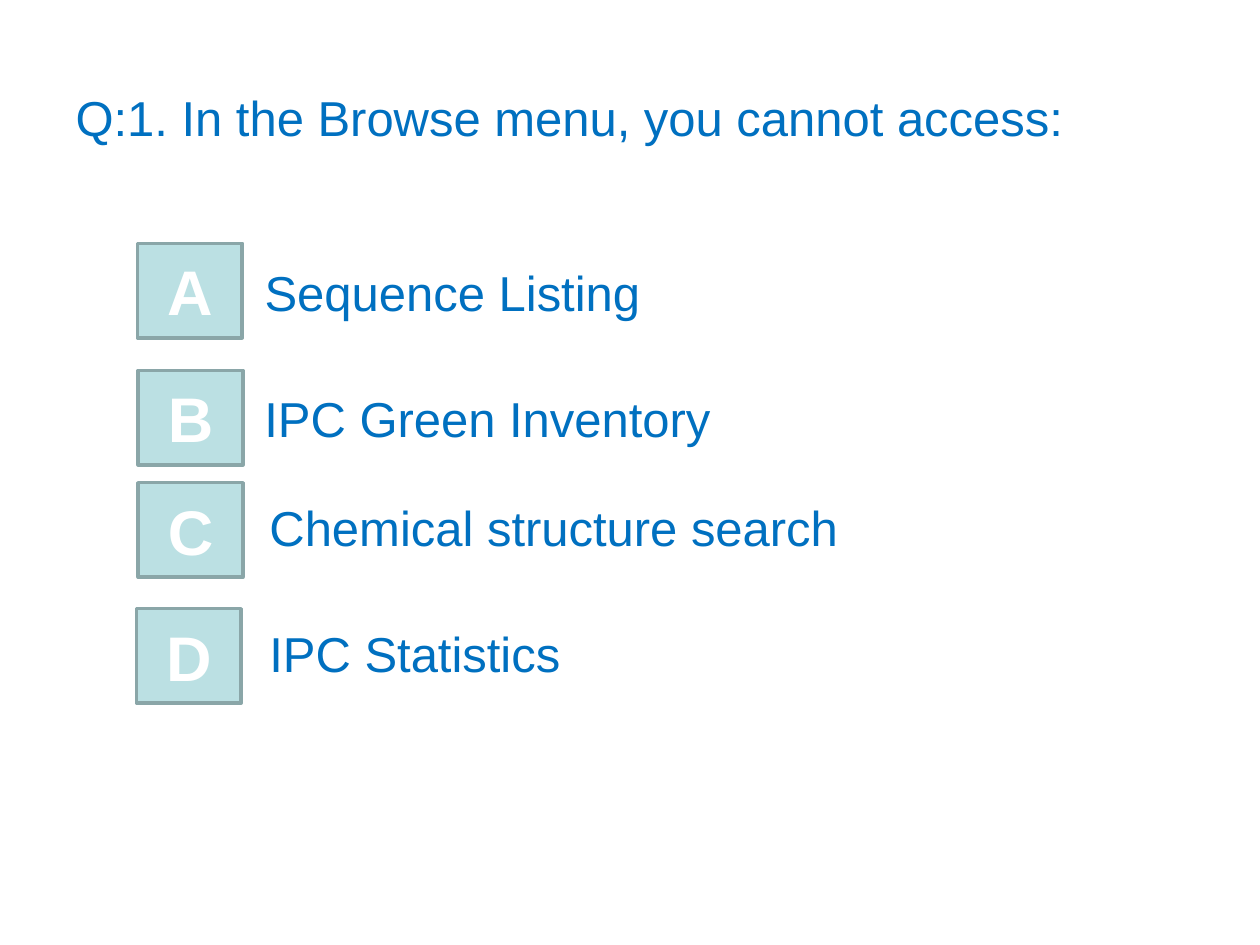
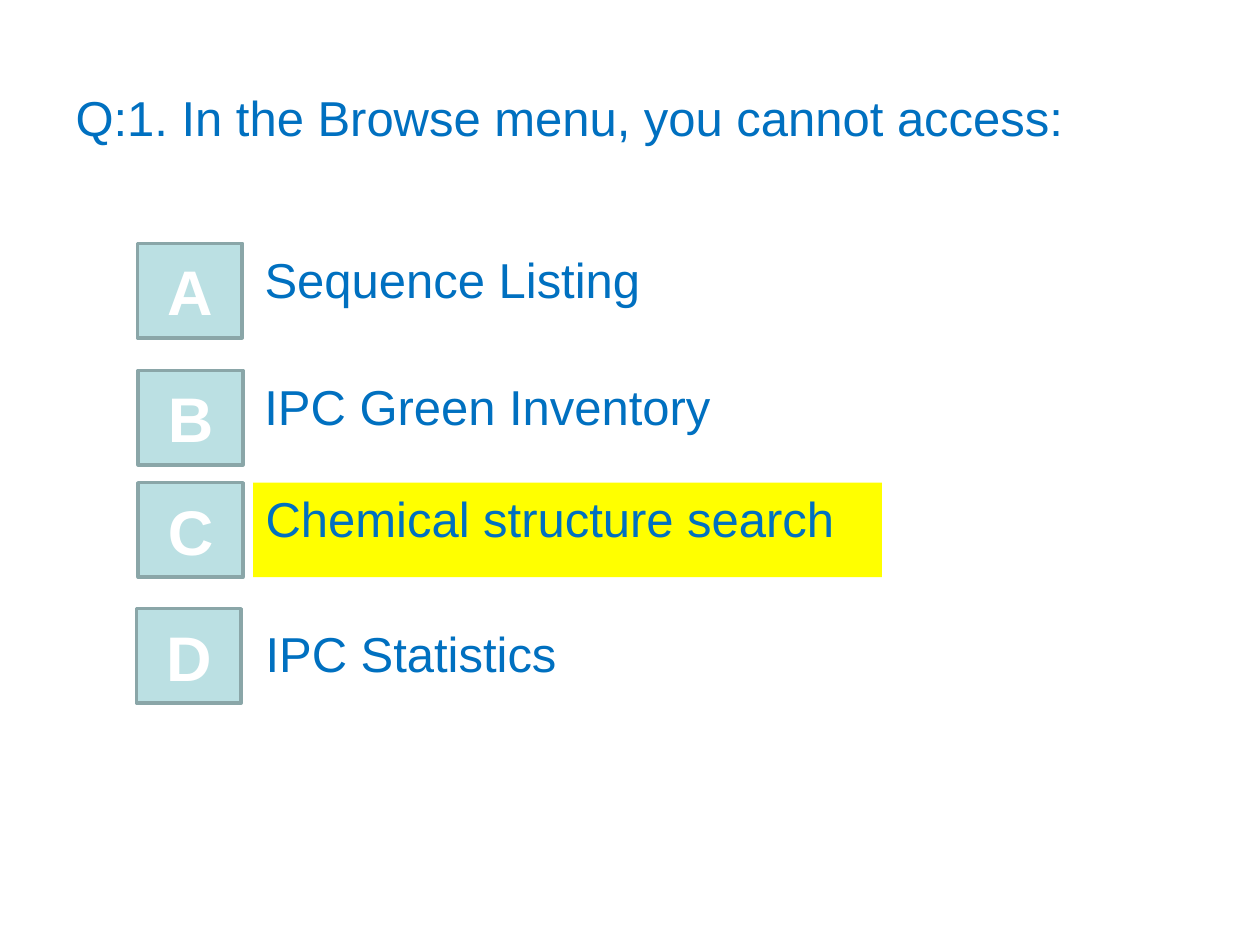
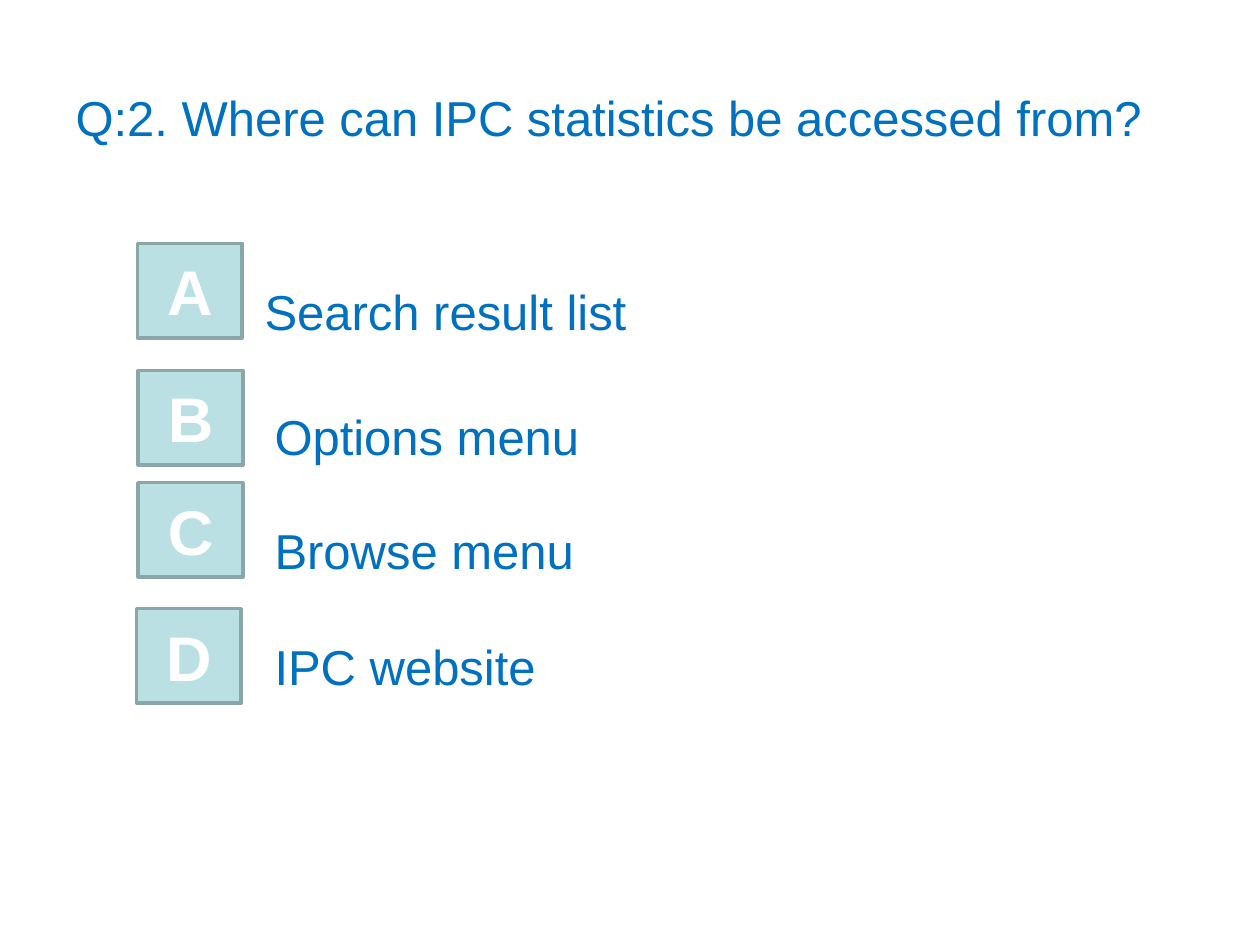
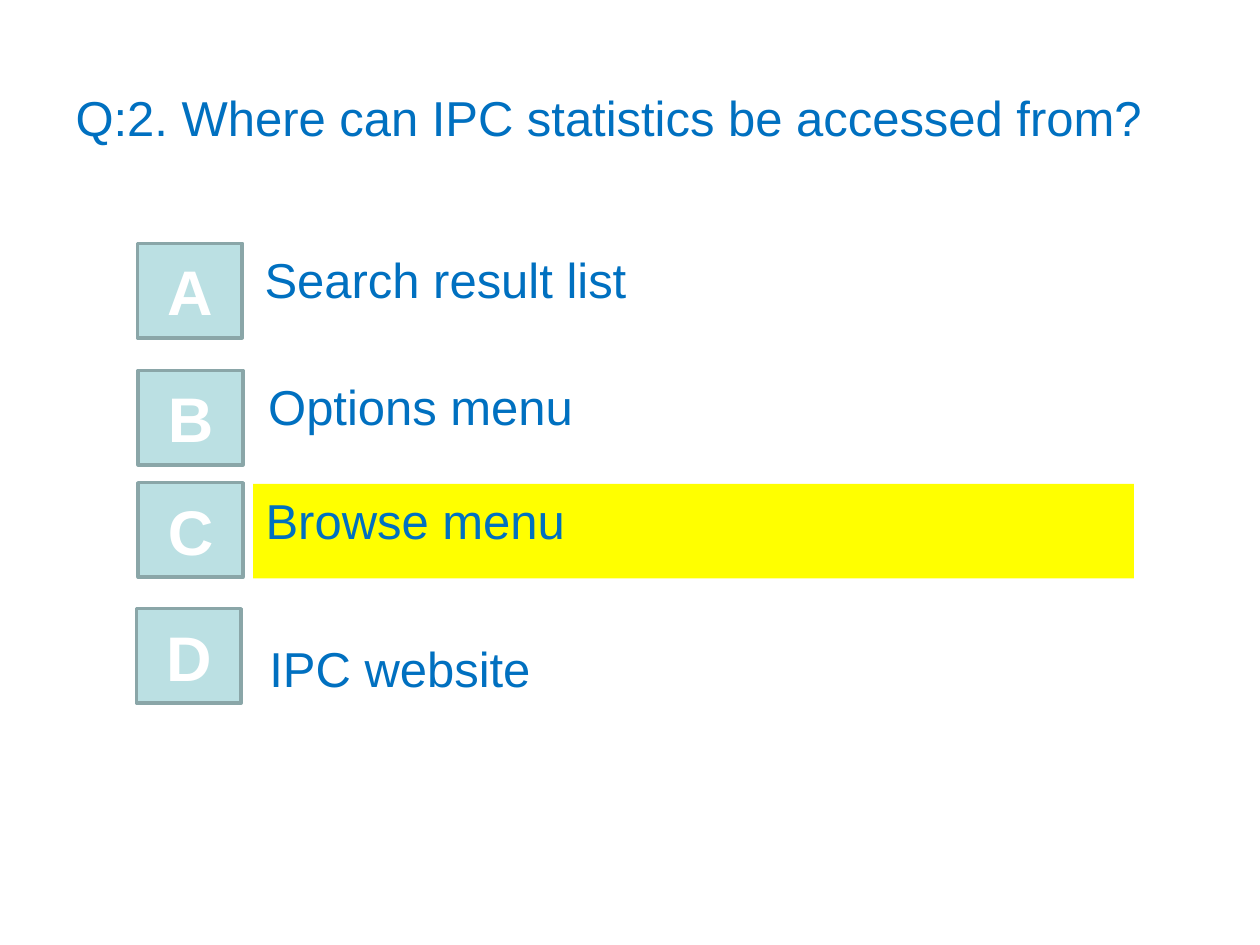
from dataclasses import dataclass

from lxml.etree import SubElement
from pptx import Presentation
from pptx.dml.color import RGBColor
from pptx.enum.shapes import MSO_SHAPE
from pptx.enum.text import MSO_ANCHOR, MSO_AUTO_SIZE, PP_ALIGN
from pptx.oxml.ns import qn
from pptx.util import Pt


@dataclass(frozen=True)
class Theme:
    """Colours, font and type sizes shared by all quiz slides."""
    font: str = "Arial"
    text: str = "0070C0"
    button: str = "BBE0E3"
    edge: str = "8AA6A8"
    white: str = "FFFFFF"
    correct: str = "FFFF00"
    text_size: int = 28
    letter_size: int = 36


THEME = Theme()
TITLE_BOX = (36, 21.6, 648, 90)
BUTTON_SIZE = (59.8, 54)
BUTTONS = {"A": (78.6, 139), "B": (79, 211.7), "C": (79, 275.8), "D": (78, 347.8)}

Q1 = "Q:1. In the Browse menu, you cannot access:"
Q2 = "Q:2. Where can IPC statistics be accessed from?"

SLIDES = [
    (Q1, [
        ("Sequence Listing", (144, 146.2, 240, 39.6), None),
        ("IPC Green Inventory", (144, 218.2, 342, 41), None),
        ("Chemical structure search", (146.9, 280.8, 387.4, 44.6), None),
        ("IPC Statistics", (146.9, 352.8, 216, 44.6), None),
    ]),
    (Q1, [
        ("Sequence Listing", (144, 139, 306, 54), THEME.white),
        ("IPC Green Inventory", (144, 211.7, 306, 54), THEME.white),
        ("Chemical structure search", (144.7, 275.8, 359.3, 54), THEME.correct),
        ("IPC Statistics", (144.7, 352.8, 252, 54), THEME.white),
    ]),
    (Q2, [
        ("Search result list", (144, 157, 432, 39.6), None),
        ("Options menu", (149.8, 229, 414.7, 41), None),
        ("Browse menu", (149.8, 293.8, 426.2, 41), None),
        ("IPC website", (149.8, 360, 426.2, 41), None),
    ]),
    (Q2, [
        ("Search result list", (144, 139, 468, 57.6), None),
        ("Options menu", (146.2, 211.7, 491.8, 54), None),
        ("Browse menu", (144.7, 276.5, 503.3, 54), THEME.correct),
        ("IPC website", (146.9, 361.4, 513.4, 41), None),
    ]),
]


def place(sp, box):
    """Move and size a placeholder to a box given in points."""
    sp.left, sp.top, sp.width, sp.height = (Pt(v) for v in box)


def fill(sp, color):
    """Give a shape a solid fill."""
    sp.fill.solid()
    sp.fill.fore_color.rgb = RGBColor.from_string(color)


def write(sp, text, size=THEME.text_size, color=THEME.text, bold=False,
          align=PP_ALIGN.LEFT, anchor=MSO_ANCHOR.TOP):
    """Write one formatted line into a shape."""
    tf = sp.text_frame
    tf.word_wrap = True
    tf.auto_size = MSO_AUTO_SIZE.NONE
    tf.vertical_anchor = anchor
    p = tf.paragraphs[0]
    p.alignment = align
    p.space_before = Pt(0)
    r = p.add_run()
    r.text = text
    r.font.name = THEME.font
    r.font.size = Pt(size)
    r.font.bold = bold
    r.font.color.rgb = RGBColor.from_string(color)
    return p


def clear_bullet(p):
    """Remove the bullet and hanging indent of a paragraph."""
    pPr = p._p.get_or_add_pPr()
    pPr.set("marL", "0")
    pPr.set("indent", "0")
    SubElement(pPr, qn("a:buNone"))


def add_question(s, text):
    """Put the question into the title placeholder."""
    place(s.shapes.title, TITLE_BOX)
    write(s.shapes.title, text, anchor=MSO_ANCHOR.MIDDLE)


def add_answer(s, text, box, color, body=None):
    """Write an answer into the body placeholder or a new text box."""
    if body is None:
        sp = s.shapes.add_textbox(*(Pt(v) for v in box))
        write(sp, text)
    else:
        sp = body
        place(sp, box)
        clear_bullet(write(sp, text))
    if color:
        fill(sp, color)


def add_button(s, letter, corner):
    """Draw the lettered button of an answer."""
    sp = s.shapes.add_shape(MSO_SHAPE.ACTION_BUTTON_CUSTOM,
                            *(Pt(v) for v in corner + BUTTON_SIZE))
    sp.shadow.inherit = False
    fill(sp, THEME.button)
    sp.line.color.rgb = RGBColor.from_string(THEME.edge)
    sp.line.width = Pt(2)
    write(sp, letter, THEME.letter_size, THEME.white, True,
          PP_ALIGN.CENTER, MSO_ANCHOR.MIDDLE)


def add_quiz_slide(prs, question, answers):
    """Add a slide with a question and its lettered answers."""
    s = prs.slides.add_slide(prs.slide_layouts[1])
    add_question(s, question)
    for i, (text, box, color) in enumerate(answers):
        add_answer(s, text, box, color, s.placeholders[1] if i == 0 else None)
    for letter, corner in BUTTONS.items():
        add_button(s, letter, corner)


def main():
    """Build and save the quiz."""
    prs = Presentation()
    prs.slide_width, prs.slide_height = Pt(720), Pt(540)
    for question, answers in SLIDES:
        add_quiz_slide(prs, question, answers)
    prs.save("out.pptx")


if __name__ == "__main__":
    main()
